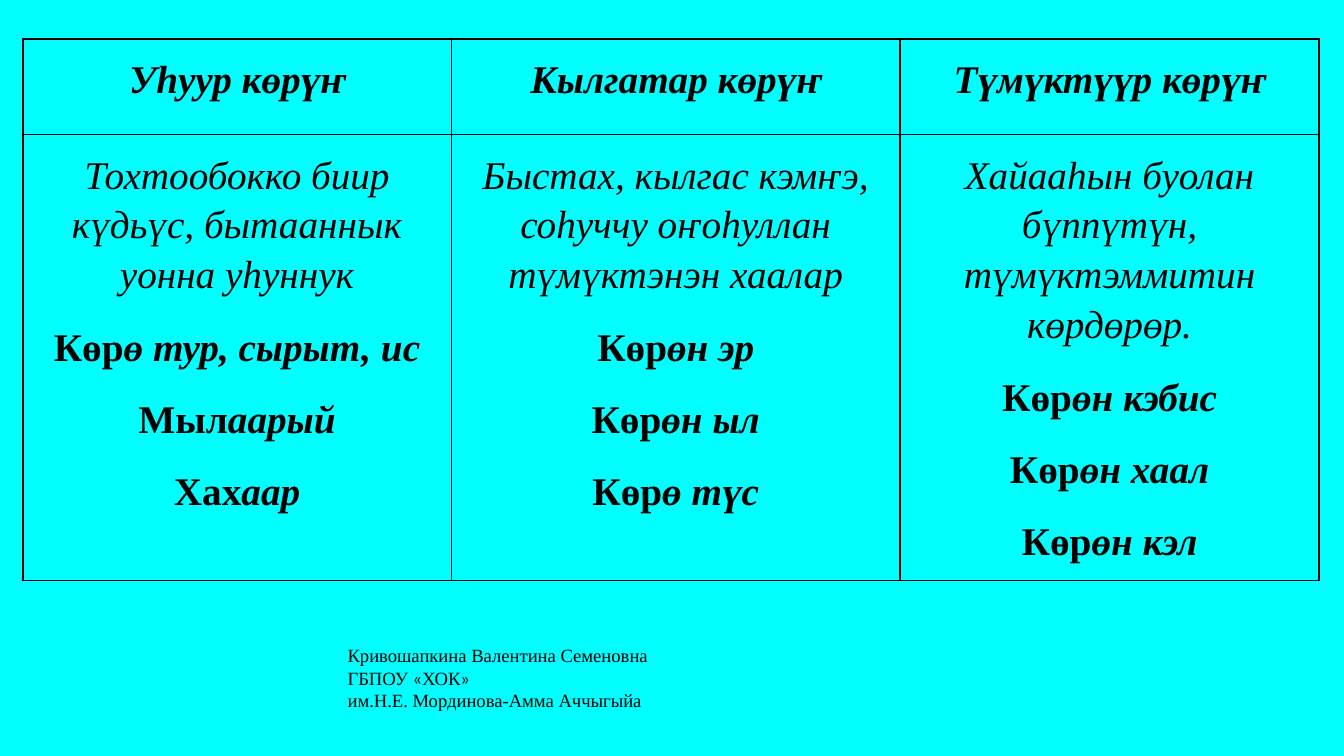
"""Build a slide with a three-column table of Yakut verb aspects and a signature."""
import pptx
import pptx.dml.color
import pptx.enum.text
import pptx.oxml
import pptx.oxml.ns
import pptx.util

Cm, Pt = pptx.util.Cm, pptx.util.Pt
RGBColor = pptx.dml.color.RGBColor

CYAN = RGBColor(0x00, 0xFF, 0xFF)
BLACK = RGBColor(0x00, 0x00, 0x00)
SERIF, SANS = "Times New Roman", "Calibri"

ASPECTS = [
    ("Уһуур көрүҥ", "Тохтообокко биир күдьүс, бытааннык уонна уһуннук",
     [("Көр", "ө тур, сырыт, ис"), ("Мыл", "аарый"), ("Хах", "аар")]),
    ("Кылгатар көрүҥ", "Быстах, кылгас кэмҥэ, соһуччу оҥоһуллан түмүктэнэн хаалар",
     [("Көр", "өн эр"), ("Көр", "өн ыл"), ("Көр", "ө түс")]),
    ("Түмүктүүр көрүҥ", "Хайааһын буолан бүппүтүн, түмүктэммитин көрдөрөр.",
     [("Көр", "өн кэбис"), ("Көр", "өн хаал"), ("Көр", "өн кэл")]),
]
SIGNATURE = [
    [("Кривошапкина Валентина Семеновна", SERIF)],
    [("ГБПОУ ", SERIF), ("«", SANS), ("ХОК", SERIF), ("»", SANS)],
    [("им.Н.Е. Мординова-Амма Аччыгыйа", SERIF)],
]
COL_WIDTHS = [8.1, 8.48, 7.92]
ROW_HEIGHTS = [1.8, 8.43]


def add_run(p, text, size, font=SERIF, bold=False, italic=False):
    r = p.add_run()
    r.text = text
    r.font.size, r.font.name = Pt(size), font
    r.font.bold, r.font.italic = bold, italic
    r.font.color.rgb = BLACK


def get_paragraph(tf, i):
    return tf.add_paragraph() if i else tf.paragraphs[0]


def add_borders(cell):
    tcPr = cell._tc.get_or_add_tcPr()
    for side in "LRTB":
        tcPr.append(pptx.oxml.parse_xml(
            f'<a:ln{side} {pptx.oxml.ns.nsdecls("a")} w="{Pt(1)}"><a:solidFill>'
            f'<a:srgbClr val="{BLACK}"/></a:solidFill></a:ln{side}>'))


def fill_cell(cell, paragraphs):
    add_borders(cell)
    cell.fill.background()
    cell.margin_left = cell.margin_right = Cm(0.18)
    cell.margin_top = cell.margin_bottom = Cm(0.25)
    for i, runs in enumerate(paragraphs):
        p = get_paragraph(cell.text_frame, i)
        p.alignment = pptx.enum.text.PP_ALIGN.CENTER
        p.line_spacing = 1.15
        if i:
            p.space_before = Pt(12)
        for text, bold, italic in runs:
            add_run(p, text, 21, bold=bold, italic=italic)


def add_aspect_table(s):
    table = s.shapes.add_table(
        len(ROW_HEIGHTS), len(COL_WIDTHS), Cm(0.43), Cm(0.74),
        Cm(sum(COL_WIDTHS)), Cm(sum(ROW_HEIGHTS))).table
    table.first_row = table.horz_banding = False
    for row, height in zip(table.rows, ROW_HEIGHTS):
        row.height = Cm(height)
    for c, (name, meaning, examples) in enumerate(ASPECTS):
        table.columns[c].width = Cm(COL_WIDTHS[c])
        fill_cell(table.cell(0, c), [[(name, True, True)]])
        forms = [[(stem, True, False), (ending, True, True)] for stem, ending in examples]
        fill_cell(table.cell(1, c), [[(meaning, False, True)]] + forms)


def add_signature(s):
    tf = s.shapes.add_textbox(Cm(6.32), Cm(12.04), Cm(7.44), Cm(1.55)).text_frame
    tf.word_wrap = True
    tf.auto_size = pptx.enum.text.MSO_AUTO_SIZE.SHAPE_TO_FIT_TEXT
    tf.vertical_anchor = pptx.enum.text.MSO_ANCHOR.MIDDLE
    for i, runs in enumerate(SIGNATURE):
        p = get_paragraph(tf, i)
        for text, font in runs:
            add_run(p, text, 10, font)


def main():
    prs = pptx.Presentation()
    prs.slide_width, prs.slide_height = Cm(25.4), Cm(14.29)
    s = prs.slides.add_slide(prs.slide_layouts[6])
    s.background.fill.solid()
    s.background.fill.fore_color.rgb = CYAN
    add_aspect_table(s)
    add_signature(s)
    prs.save("out.pptx")


if __name__ == "__main__":
    main()
